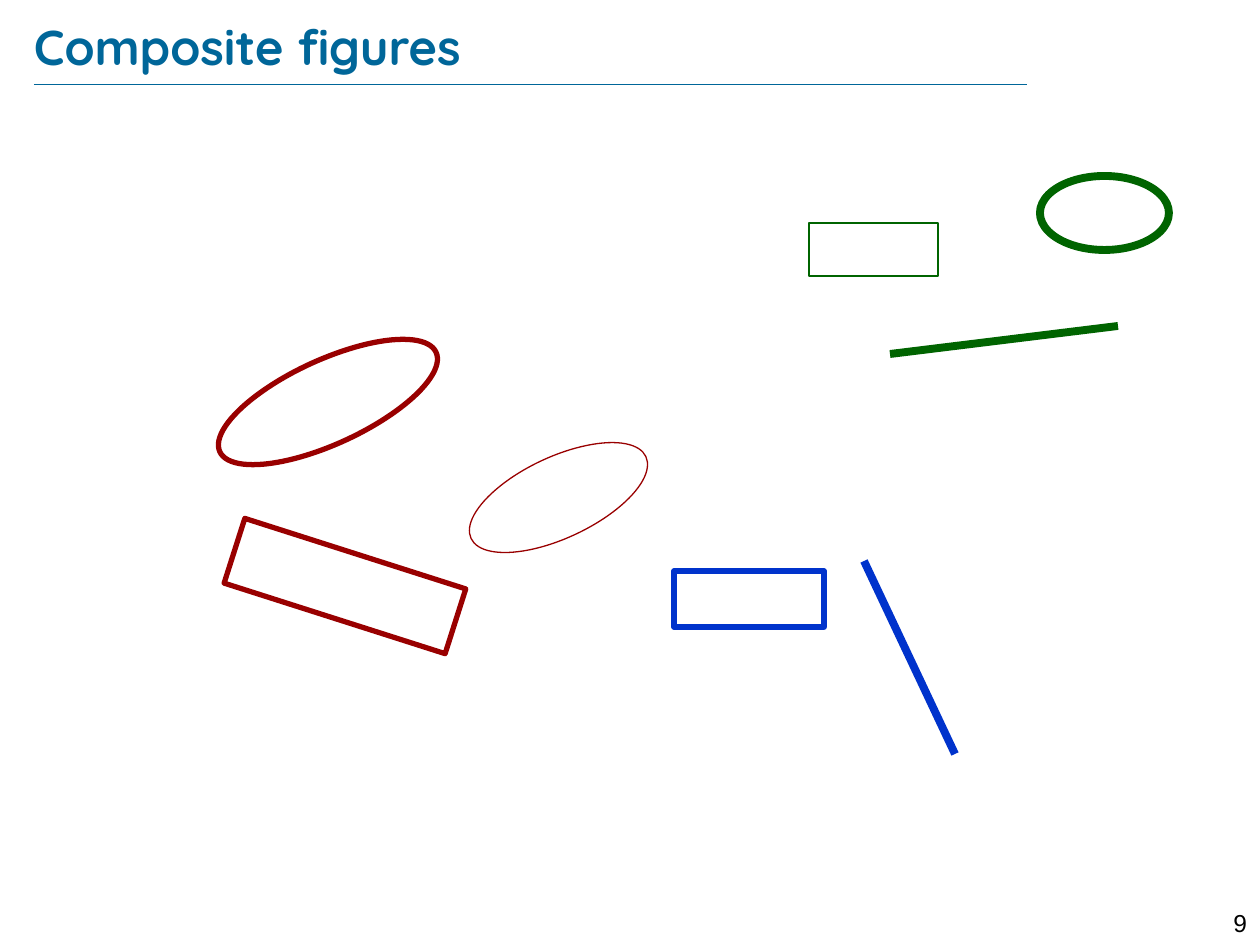
from pptx import Presentation
from pptx.dml.color import RGBColor
from pptx.enum.shapes import MSO_CONNECTOR, MSO_SHAPE
from pptx.enum.text import MSO_ANCHOR, PP_ALIGN
from pptx.oxml.ns import qn
from pptx.util import Emu, Pt
from lxml import etree

PX = 914400 / 126
ELLIPSE, RECT = MSO_SHAPE.OVAL, MSO_SHAPE.RECTANGLE
STRAIGHT = MSO_CONNECTOR.STRAIGHT
MIDDLE, TOP = MSO_ANCHOR.MIDDLE, MSO_ANCHOR.TOP
LEFT, RIGHT = PP_ALIGN.LEFT, PP_ALIGN.RIGHT
TEAL, GREEN, RED, BLUE = "006699", "006400", "990000", "0033CC"


def px(*values):
    return [Emu(round(v * PX)) for v in values]


def rgb(value):
    return RGBColor.from_string(value)


def stroke(shape, color, width):
    shape.line.color.rgb = rgb(color)
    shape.line.width = Pt(width)


def add_outline(s, kind, x, y, w, h, color, width, rotation=0):
    sp = s.shapes.add_shape(kind, *px(x, y, w, h))
    sp.shadow.inherit = False
    sp.fill.background()
    sp.rotation = rotation
    stroke(sp, color, width)


def add_line(s, x1, y1, x2, y2, color, width):
    line = s.shapes.add_connector(STRAIGHT, *px(x1, y1, x2, y2))
    stroke(line, color, width)
    etree.SubElement(line._element.spPr, qn("a:effectLst"))


def add_text(s, x, y, w, h, text, font, size, color, bold=False,
             align=LEFT, anchor=TOP, inset=(0, 0)):
    tf = s.shapes.add_textbox(*px(x, y, w, h)).text_frame
    tf.word_wrap = True
    tf.vertical_anchor = anchor
    tf.margin_left, tf.margin_top = px(*inset)
    tf.margin_right, tf.margin_bottom = px(*inset)
    p = tf.paragraphs[0]
    p.text = text
    p.alignment = align
    p.font.name = font
    p.font.size = Pt(size)
    p.font.bold = bold
    p.font.color.rgb = rgb(color)


def add_header(s, x, y, w, h):
    add_line(s, x, y + 68, x + 993, y + 68, TEAL, 0.25)
    add_text(s, x, y, w, h, "Composite figures", "Quicksand", 28, TEAL,
             bold=True, anchor=MIDDLE)


def add_page_number(s, x, y, w, h):
    add_text(s, x, y, w, h, "9", "Arial", 14, "000000",
             align=RIGHT, inset=(13, 6))


def add_green_figure(s, x, y):
    add_outline(s, ELLIPSE, x + 231, y, 129, 74, GREEN, 4.5)
    add_outline(s, RECT, x, y + 47, 129, 53, GREEN, 1.5)
    add_line(s, x + 81, y + 178, x + 309, y + 150, GREEN, 4.5)


def add_red_figure(s, x, y):
    add_outline(s, ELLIPSE, x + 300, y + 62, 81, 193, RED, 0.75, 244.9)
    add_outline(s, ELLIPSE, x + 68, y - 56, 84, 238, RED, 3, 245.3)
    add_outline(s, RECT, x + 93, y + 131, 68, 232, RED, 3, 287.7)


def add_blue_figure(s, x, y):
    add_outline(s, RECT, x, y + 10, 150, 56, BLUE, 3)
    add_line(s, x + 190, y, x + 281, y + 193, BLUE, 4.5)


def main():
    prs = Presentation()
    prs.slide_width, prs.slide_height = px(1260, 945)
    s = prs.slides.add_slide(prs.slide_layouts[6])
    add_header(s, 34, 16, 1095, 60)
    add_page_number(s, 1191, 902, 69, 30)
    add_green_figure(s, 809, 176)
    add_red_figure(s, 218, 339)
    add_blue_figure(s, 674, 561)
    prs.save("out.pptx")


if __name__ == "__main__":
    main()
